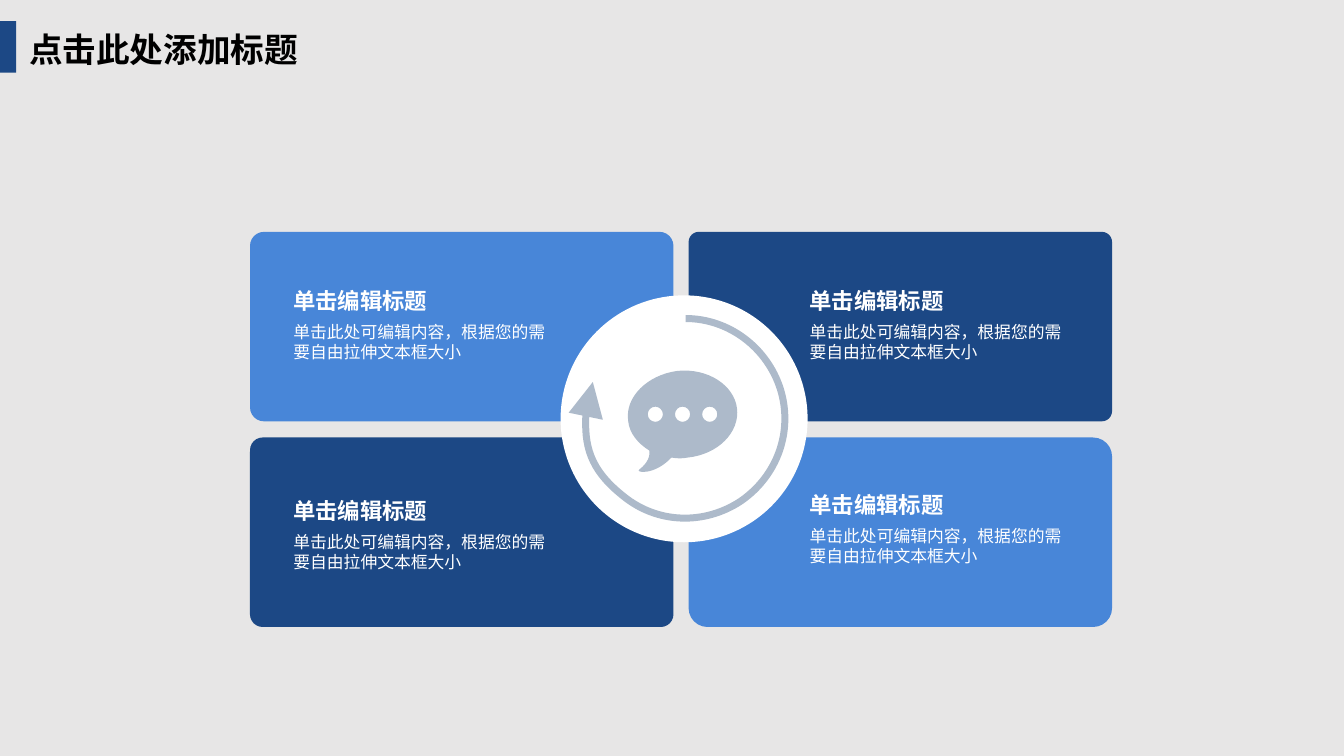
from dataclasses import dataclass

from lxml.etree import SubElement
from pptx import Presentation
from pptx.dml.color import RGBColor
from pptx.enum.shapes import MSO_SHAPE as Preset
from pptx.enum.text import MSO_AUTO_SIZE as AutoSize
from pptx.oxml.ns import qn
from pptx.shapes.autoshape import Shape
from pptx.slide import Slide
from pptx.util import Inches, Pt

NAVY = RGBColor(0x1C, 0x48, 0x85)
BLUE = RGBColor(0x48, 0x86, 0xD8)
STEEL = RGBColor(0xAD, 0xBA, 0xCA)
WHITE = RGBColor(0xFF, 0xFF, 0xFF)
BLACK = RGBColor(0x00, 0x00, 0x00)
BACKGROUND = RGBColor(0xE7, 0xE6, 0xE6)

CJK_FONT = "Noto Sans CJK SC"
HEADING = "单击编辑标题"
BODY = "单击此处可编辑内容，根据您的需要自由拉伸文本框大小"

CARD_WIDTH, CARD_HEIGHT = 4.2, 1.88
BODY_OFFSET = 0.345

Point = tuple[float, float]
Curve = tuple[Point, Point, Point]


@dataclass(frozen=True)
class Card:
    left: float
    top: float
    corner: float
    color: RGBColor
    text_left: float
    text_top: float


@dataclass(frozen=True)
class Contour:
    start: Point
    curves: list[Curve]
    closed: bool = True


CARDS = [
    Card(2.48, 2.3, 0.074, BLUE, 2.91, 2.85),
    Card(6.83, 2.3, 0.054, NAVY, 8.03, 2.85),
    Card(2.48, 4.34, 0.067, NAVY, 2.91, 4.93),
    Card(6.83, 4.34, 0.1, BLUE, 8.03, 4.87),
]

BUBBLE = Contour((7.31, 4.05), [
    ((7.28, 3.82), (7.02, 3.65), (6.72, 3.68)),
    ((6.42, 3.72), (6.2, 3.94), (6.23, 4.17)),
    ((6.24, 4.3), (6.33, 4.4), (6.44, 4.47)),
    ((6.45, 4.52), (6.43, 4.59), (6.34, 4.66)),
    ((6.3, 4.69), (6.49, 4.72), (6.66, 4.54)),
    ((6.72, 4.55), (6.77, 4.55), (6.82, 4.54)),
    ((7.12, 4.51), (7.34, 4.29), (7.31, 4.05)),
])
DOT_CENTERS: list[Point] = [(6.5 + 0.27 * index, 4.11) for index in range(3)]
DOT_RADIUS = 0.075

ARROW = Contour((6.8, 3.16), [
    ((7.23, 3.16), (7.61, 3.45), (7.74, 3.86)),
    ((7.87, 4.28), (7.71, 4.72), (7.35, 4.97)),
    ((6.99, 5.21), (6.52, 5.2), (6.18, 4.92)),
    ((5.84, 4.65), (5.72, 4.19), (5.88, 3.79)),
], closed=False)


def paint(shape: Shape, color: RGBColor) -> None:
    shape.shadow.inherit = False
    shape.fill.solid()
    shape.fill.fore_color.rgb = color
    shape.line.fill.background()


def add_block(slide: Slide, preset: Preset, left: float, top: float,
              width: float, height: float, color: RGBColor) -> Shape:
    shape = slide.shapes.add_shape(
        preset, Inches(left), Inches(top), Inches(width), Inches(height))
    paint(shape, color)
    return shape


def add_text(slide: Slide, text: str, left: float, top: float, width: float,
             height: float, size: int, color: RGBColor = WHITE,
             bold: bool = False, font: str = "Arial",
             margins: Point = (0, 0)) -> None:
    box = slide.shapes.add_textbox(
        Inches(left), Inches(top), Inches(width), Inches(height))
    frame = box.text_frame
    frame.word_wrap = True
    frame.auto_size = AutoSize.SHAPE_TO_FIT_TEXT
    frame.margin_left = frame.margin_right = Inches(margins[0])
    frame.margin_top = frame.margin_bottom = Inches(margins[1])
    run = frame.paragraphs[0].add_run()
    run.text = text
    run.font.name = font
    run.font.size = Pt(size)
    run.font.bold = bold
    run.font.color.rgb = color
    SubElement(run.font._element, qn("a:ea")).set("typeface", CJK_FONT)


def circle(center: Point, radius: float) -> Contour:
    """Clockwise circle of four cubic curves, starting at the bottom."""
    x, y = center
    handle = 0.55 * radius
    curves = []
    for dx, dy in ((0, 1), (-1, 0), (0, -1), (1, 0)):
        next_dx, next_dy = -dy, dx
        end = (x + radius * next_dx, y + radius * next_dy)
        first = (x + radius * dx + handle * next_dx, y + radius * dy + handle * next_dy)
        second = (end[0] + handle * dx, end[1] + handle * dy)
        curves.append((first, second, end))
    return Contour((x, y + radius), curves)


def add_curved_shape(slide: Slide, left: float, top: float, width: float,
                     height: float, contours: list[Contour]) -> Shape:
    builder = slide.shapes.build_freeform(Inches(left), Inches(top))
    builder.add_line_segments([(Inches(left + width), Inches(top + height))])
    shape = builder.convert_to_shape()
    # Cubic curves take the place of the diagonal that sets the frame
    outline = shape._element.find(".//" + qn("a:path"))
    for segment in list(outline):
        outline.remove(segment)

    def add_segment(tag: str, points: tuple[Point, ...]) -> None:
        segment = SubElement(outline, qn(tag))
        for x, y in points:
            point = SubElement(segment, qn("a:pt"))
            point.set("x", str(Inches(x - left)))
            point.set("y", str(Inches(y - top)))

    for contour in contours:
        add_segment("a:moveTo", (contour.start,))
        for curve in contour.curves:
            add_segment("a:cubicBezTo", curve)
        if contour.closed:
            add_segment("a:close", ())
    paint(shape, STEEL)
    return shape


def add_circular_arrow(slide: Slide) -> None:
    arrow = add_curved_shape(slide, 5.81, 3.16, 1.98, 1.98, [ARROW])
    arrow.fill.background()
    arrow.line.color.rgb = STEEL
    arrow.line.width = Pt(5)
    head = SubElement(arrow.line._get_or_add_ln(), qn("a:tailEnd"))
    for name, value in (("type", "triangle"), ("w", "lg"), ("len", "lg")):
        head.set(name, value)


def main() -> None:
    presentation = Presentation()
    presentation.slide_width = Inches(13.33)
    presentation.slide_height = Inches(7.5)
    slide = presentation.slides.add_slide(presentation.slide_layouts[6])
    slide.background.fill.solid()
    slide.background.fill.fore_color.rgb = BACKGROUND

    # Title with its side mark
    add_text(slide, "点击此处添加标题", 0.19, 0.24, 2.89, 0.51, 24, BLACK,
             bold=True, font=CJK_FONT, margins=(0.1, 0.05))
    add_block(slide, Preset.RECTANGLE, 0, 0.21, 0.16, 0.51, NAVY)

    # Four cards
    for card in CARDS:
        block = add_block(slide, Preset.ROUNDED_RECTANGLE, card.left, card.top,
                          CARD_WIDTH, CARD_HEIGHT, card.color)
        block.adjustments[0] = card.corner

    # Central emblem
    add_block(slide, Preset.OVAL, 5.56, 2.93, 2.45, 2.45, WHITE)
    add_circular_arrow(slide)
    dots = [circle(center, DOT_RADIUS) for center in DOT_CENTERS]
    add_curved_shape(slide, 6.2, 3.65, 1.13, 1.07, [BUBBLE, *dots])

    # Card texts
    for card in CARDS:
        add_text(slide, HEADING, card.text_left, card.text_top, 2.14, 0.27, 16,
                 bold=True)
        add_text(slide, BODY, card.text_left, card.text_top + BODY_OFFSET,
                 2.55, 0.4, 12)

    presentation.save("out.pptx")


if __name__ == "__main__":
    main()
